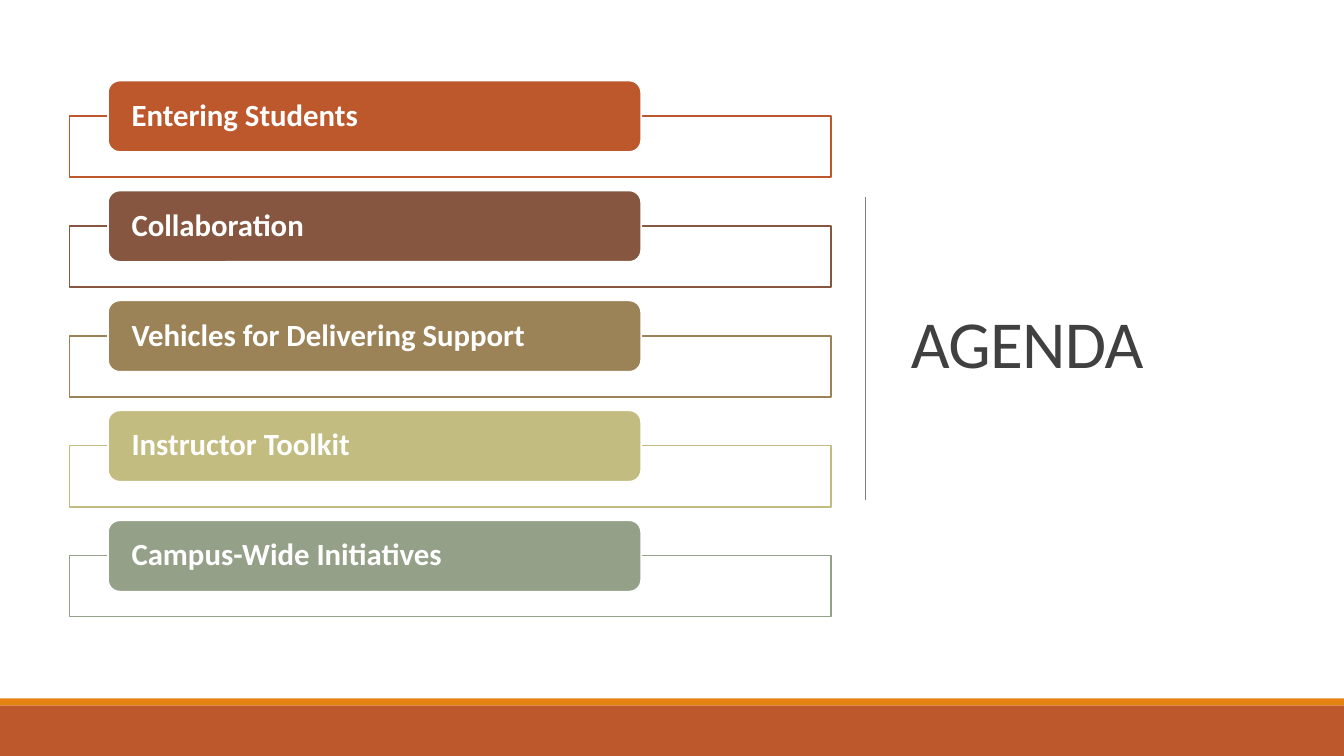
"""Build an agenda slide with five coloured topic bars beside its title."""
from dataclasses import dataclass

from lxml import etree
from pptx import Presentation
from pptx.dml.color import RGBColor
from pptx.enum.shapes import MSO_CONNECTOR, MSO_SHAPE
from pptx.enum.text import MSO_ANCHOR, MSO_AUTO_SIZE, PP_ALIGN
from pptx.oxml.ns import qn
from pptx.util import Cm, Pt


@dataclass(frozen=True)
class Theme:
    font: str = "Calibri"
    white: str = "FFFFFF"
    title: str = "404040"
    divider: str = "808080"
    stripe: str = "E48312"
    footer: str = "BD582C"
    title_size: int = 48
    topic_size: int = 22


THEME = Theme()
TOPICS = [
    ("Entering Students", "BD582C"),
    ("Collaboration", "865640"),
    ("Vehicles for Delivering Support", "9B8357"),
    ("Instructor Toolkit", "C2BC80"),
    ("Campus-Wide Initiatives", "94A088"),
]
FIRST_TOP, PITCH = 2.03, 2.77


def rgb(value):
    return RGBColor.from_string(value)


def add_box(s, kind, x, y, w, h, fill, line=None):
    sp = s.shapes.add_shape(kind, Cm(x), Cm(y), Cm(w), Cm(h))
    sp.shadow.inherit = False
    sp.fill.solid()
    sp.fill.fore_color.rgb = rgb(fill)
    if line:
        sp.line.color.rgb = rgb(line)
        sp.line.width = Pt(1.25)
    else:
        sp.line.fill.background()
    return sp


def set_text(sp, text, size, color, bold, spacing):
    tf = sp.text_frame
    tf.text = text
    tf.word_wrap = True
    tf.auto_size = MSO_AUTO_SIZE.NONE
    tf.vertical_anchor = MSO_ANCHOR.MIDDLE
    p = tf.paragraphs[0]
    p.alignment = PP_ALIGN.LEFT
    p.line_spacing = spacing
    p.font.name = THEME.font
    p.font.size = Pt(size)
    p.font.bold = bold
    p.font.color.rgb = rgb(color)
    return tf


def add_topic(s, text, color, top):
    add_box(s, MSO_SHAPE.RECTANGLE, 1.75, top + 0.89, 19.2, 1.54, THEME.white, color)
    label = add_box(s, MSO_SHAPE.ROUNDED_RECTANGLE, 2.72, top, 13.44, 1.8, color, THEME.white)
    tf = set_text(label, text, THEME.topic_size, THEME.white, True, 0.9)
    tf.margin_left = tf.margin_right = Cm(0.51)
    tf.margin_top = tf.margin_bottom = 0


def add_title(s, text):
    title = s.shapes.title
    title.left, title.top, title.width, title.height = Cm(22.7), Cm(1.75), Cm(9.38), Cm(14.05)
    tf = set_text(title, text, THEME.title_size, THEME.title, False, 0.85)
    tf.paragraphs[0].runs[0].font._element.set("spc", "-50")


def add_divider(s):
    line = s.shapes.add_connector(MSO_CONNECTOR.STRAIGHT, Cm(21.82), Cm(4.97), Cm(21.82), Cm(12.6))
    line.line.color.rgb = rgb(THEME.divider)
    line.line.width = Pt(0.5)
    etree.SubElement(line._element.spPr, qn("a:effectLst"))


def main():
    prs = Presentation()
    prs.slide_width, prs.slide_height = Cm(33.87), Cm(19.05)
    s = prs.slides.add_slide(prs.slide_layouts[5])
    add_title(s, "AGENDA")
    add_divider(s)
    add_box(s, MSO_SHAPE.RECTANGLE, 0, 17.6, 33.87, 0.18, THEME.stripe)
    add_box(s, MSO_SHAPE.RECTANGLE, 0, 17.78, 33.87, 1.27, THEME.footer)
    for i, (text, color) in enumerate(TOPICS):
        add_topic(s, text, color, FIRST_TOP + i * PITCH)
    prs.save("out.pptx")


if __name__ == "__main__":
    main()
